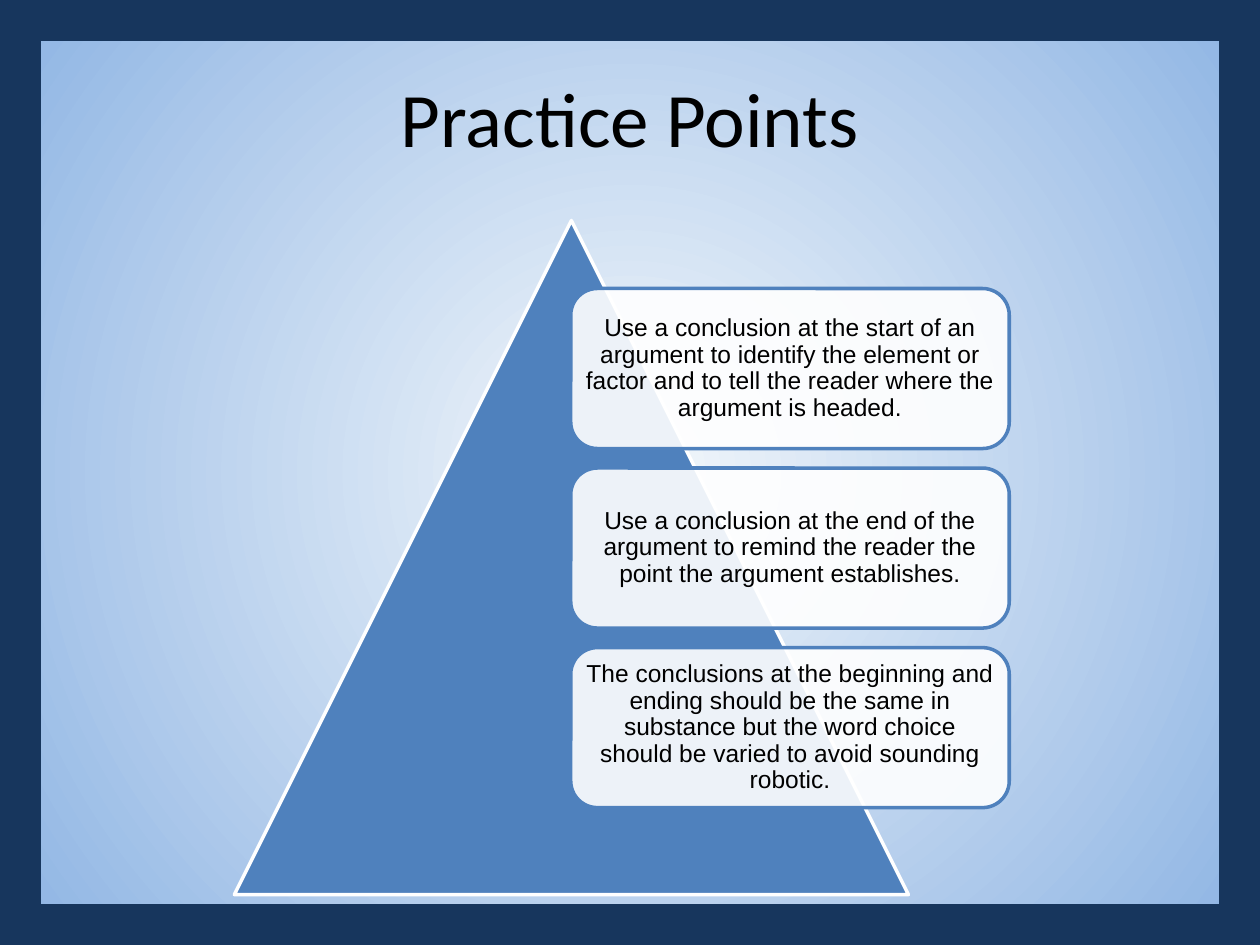
from lxml import etree
from pptx import Presentation
from pptx.dml.color import RGBColor
from pptx.enum.shapes import MSO_SHAPE as SHAPE
from pptx.enum.text import MSO_ANCHOR as ANCHOR, PP_ALIGN as ALIGN
from pptx.oxml import parse_xml
from pptx.oxml.ns import nsdecls, qn
from pptx.util import Inches, Pt

COLORS = {
    "frame": "17365D",
    "blue": "4F81BD",
    "white": "FFFFFF",
    "text": "000000",
    "glow": "F4F8FB",
    "edge": "8CB3E3",
}
POINTS = [
    "Use a conclusion at the start of an argument to identify the element or "
    "factor and to tell the reader where the argument is headed.",
    "Use a conclusion at the end of the argument to remind the reader the "
    "point the argument establishes.",
    "The conclusions at the beginning and ending should be the same in "
    "substance but the word choice should be varied to avoid sounding robotic.",
]
CARD_TOP, CARD_STEP = 2.29, 1.425


def rgb(name):
    return RGBColor.from_string(COLORS[name])


class SlideBuilder:
    def __init__(self, slide):
        self.s = slide

    def background(self, center, edge):
        """Fill the slide with a gradient that spreads from its middle."""
        fill = self.s.background.fill
        fill.gradient()
        for stop, color in zip(fill.gradient_stops, (center, edge)):
            stop.color.rgb = rgb(color)
        lin = self.s.element.xpath(".//a:lin")[0]
        lin.getparent().replace(lin, parse_xml(
            f'<a:path {nsdecls("a")} path="circle">'
            '<a:fillToRect l="50000" t="50000" r="50000" b="50000"/></a:path>'))

    def shape(self, kind, box, line, width, fill=None, opacity=100):
        sp = self.s.shapes.add_shape(kind, *map(Inches, box))
        sp.shadow.inherit = False
        sp.line.color.rgb = rgb(line)
        sp.line.width = Pt(width)
        if fill is None:
            sp.fill.background()
            return sp
        sp.fill.solid()
        sp.fill.fore_color.rgb = rgb(fill)
        if opacity < 100:
            clr = sp.element.xpath("./p:spPr/a:solidFill/a:srgbClr")[0]
            etree.SubElement(clr, qn("a:alpha")).set("val", str(opacity * 1000))
        return sp

    def set_text(self, sp, text, font, size, spacing=1.0):
        tf = sp.text_frame
        tf.word_wrap = True
        tf.vertical_anchor = ANCHOR.MIDDLE
        p = tf.paragraphs[0]
        p.text = text
        p.alignment = ALIGN.CENTER
        p.line_spacing = spacing
        p.font.name = font
        p.font.size = Pt(size)
        p.font.color.rgb = rgb("text")
        return tf

    def title(self, text, box):
        sp = self.s.shapes.add_textbox(*map(Inches, box))
        self.set_text(sp, text, "Calibri", 44)

    def card(self, text, box):
        sp = self.shape(SHAPE.ROUNDED_RECTANGLE, box, "blue", 2, "white", 90)
        tf = self.set_text(sp, text, "Arial", 14, 0.9)
        tf.margin_left = tf.margin_right = Inches(0.05)
        tf.margin_top = tf.margin_bottom = Inches(0.05)


def main():
    prs = Presentation()
    prs.slide_width, prs.slide_height = Inches(10), Inches(7.5)
    slide = SlideBuilder(prs.slides.add_slide(prs.slide_layouts[6]))

    slide.background("glow", "edge")
    slide.shape(SHAPE.RECTANGLE, (0, 0, 10, 7.5), "frame", 47)
    slide.title("Practice Points", (0.5, 0.3, 9, 1.25))
    slide.shape(SHAPE.ISOSCELES_TRIANGLE, (1.86, 1.75, 5.35, 5.35),
                "white", 2, "blue")
    for i, text in enumerate(POINTS):
        slide.card(text, (4.53, CARD_TOP + i * CARD_STEP, 3.48, 1.27))

    prs.save("out.pptx")


if __name__ == "__main__":
    main()
